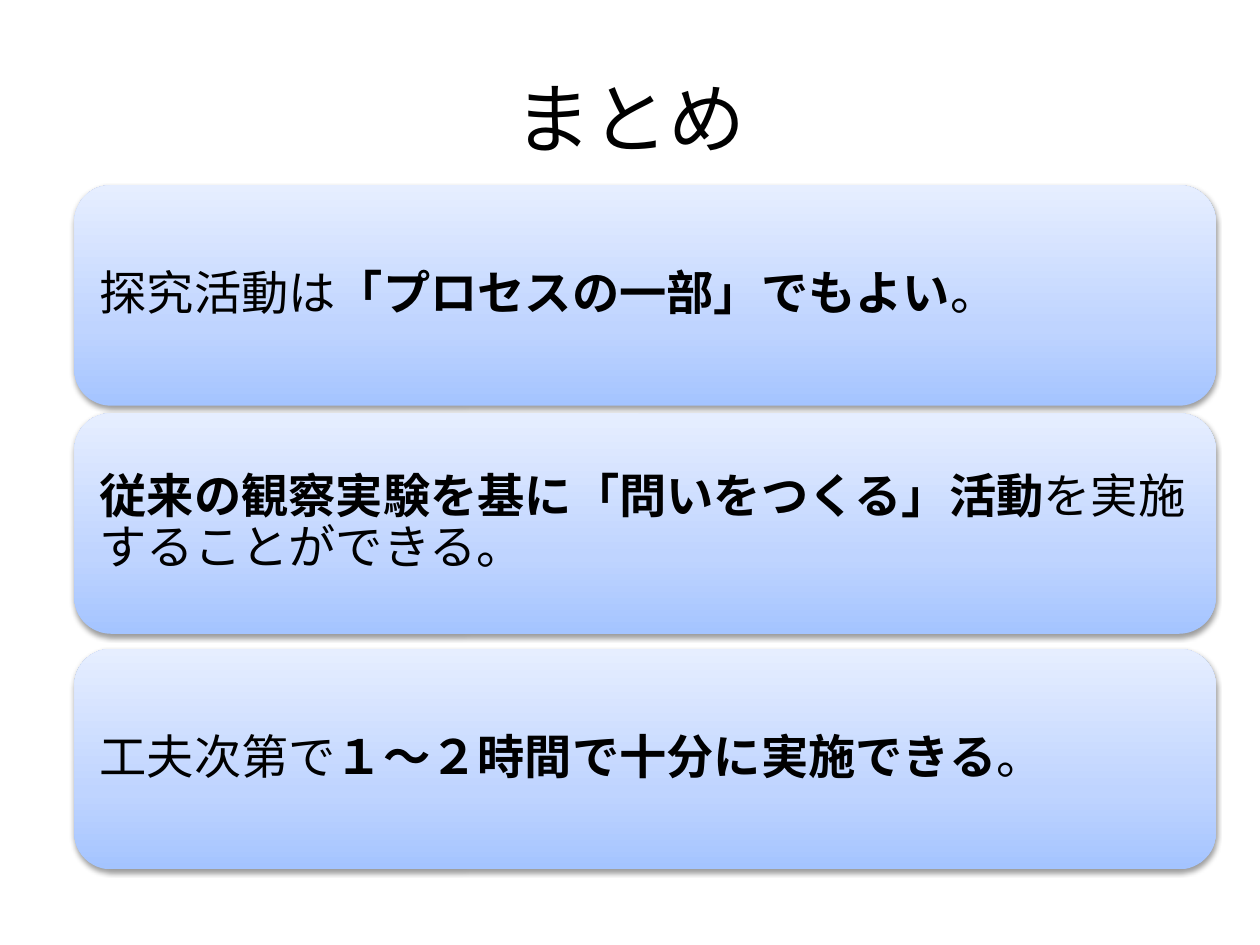
import copy

import pptx
import pptx.dml.color
import pptx.enum.shapes
import pptx.enum.text
import pptx.oxml
import pptx.oxml.ns
import pptx.util
from pptx.util import Inches

FONT = "Cabin"
GRADIENT = [(0, "A4C4FF"), (0.35, "BFD4FF"), (1, "E6EEFF")]
SHADOW = (
    f'<a:outerShdw {pptx.oxml.ns.nsdecls("a")} blurRad="40000" dist="20000" '
    'dir="5400000" rotWithShape="0"><a:srgbClr val="000000">'
    '<a:alpha val="38000"/></a:srgbClr></a:outerShdw>'
)

# Each point is a list of (text, bold) runs.
POINTS = [
    [("探究活動は", False), ("「プロセスの一部」でもよい", True), ("。", False)],
    [("従来の観察実験を基に「問いをつくる」活動", True),
     ("を実施することができる。", False)],
    [("工夫次第で", False), ("１～２時間で十分に実施できる", True), ("。", False)],
]
CARD_TOPS = [1.47, 3.28, 5.15]


def rgb(value):
    return pptx.dml.color.RGBColor.from_string(value)


def add_text(slide, left, top, width, height, runs, size, align, inset):
    tf = slide.shapes.add_textbox(left, top, width, height).text_frame
    tf.word_wrap = True
    tf.vertical_anchor = pptx.enum.text.MSO_ANCHOR.MIDDLE
    tf.margin_left = tf.margin_right = inset
    tf.margin_top = tf.margin_bottom = inset
    p = tf.paragraphs[0]
    p.alignment = align
    for text, bold in runs:
        r = p.add_run()
        r.text = text
        r.font.name = FONT
        r.font.size = pptx.util.Pt(size)
        r.font.bold = bold
        r.font.color.rgb = rgb("000000")
    return p


def fill_gradient(sp):
    """Shade the shape from the first stop at the bottom to the last at the top."""
    sp.fill.gradient()
    sp.fill.gradient_angle = 90
    first = sp.element.spPr.find(".//" + pptx.oxml.ns.qn("a:gs"))
    first.addnext(copy.deepcopy(first))
    for stop, (position, color) in zip(sp.fill.gradient_stops, GRADIENT):
        stop.position = position
        stop.color.rgb = rgb(color)


def add_shadow(sp):
    sp.shadow.inherit = False
    effects = sp.element.spPr.find(pptx.oxml.ns.qn("a:effectLst"))
    effects.append(pptx.oxml.parse_xml(SHADOW))


def add_title(slide, left, top, width, height):
    add_text(slide, left, top, width, height, [("まとめ", False)], 44,
             pptx.enum.text.PP_ALIGN.CENTER, Inches(0.05))


def add_card(slide, left, top, width, height, runs):
    sp = slide.shapes.add_shape(
        pptx.enum.shapes.MSO_SHAPE.ROUNDED_RECTANGLE, left, top, width, height)
    fill_gradient(sp)
    sp.line.fill.background()
    add_shadow(sp)
    pad = Inches(0.09)
    p = add_text(slide, left + pad, top + pad, width - 2 * pad, height - 2 * pad,
                 runs, 27, pptx.enum.text.PP_ALIGN.LEFT, Inches(0.11))
    p.line_spacing = 0.9


def main():
    prs = pptx.Presentation()
    prs.slide_width, prs.slide_height = Inches(10), Inches(7.5)
    slide = prs.slides.add_slide(prs.slide_layouts[6])
    add_title(slide, Inches(0.5), Inches(0.3), Inches(9), Inches(1.25))
    for top, runs in zip(CARD_TOPS, POINTS):
        add_card(slide, Inches(0.59), Inches(top), Inches(9.06), Inches(1.75), runs)
    prs.save("out.pptx")


if __name__ == "__main__":
    main()
